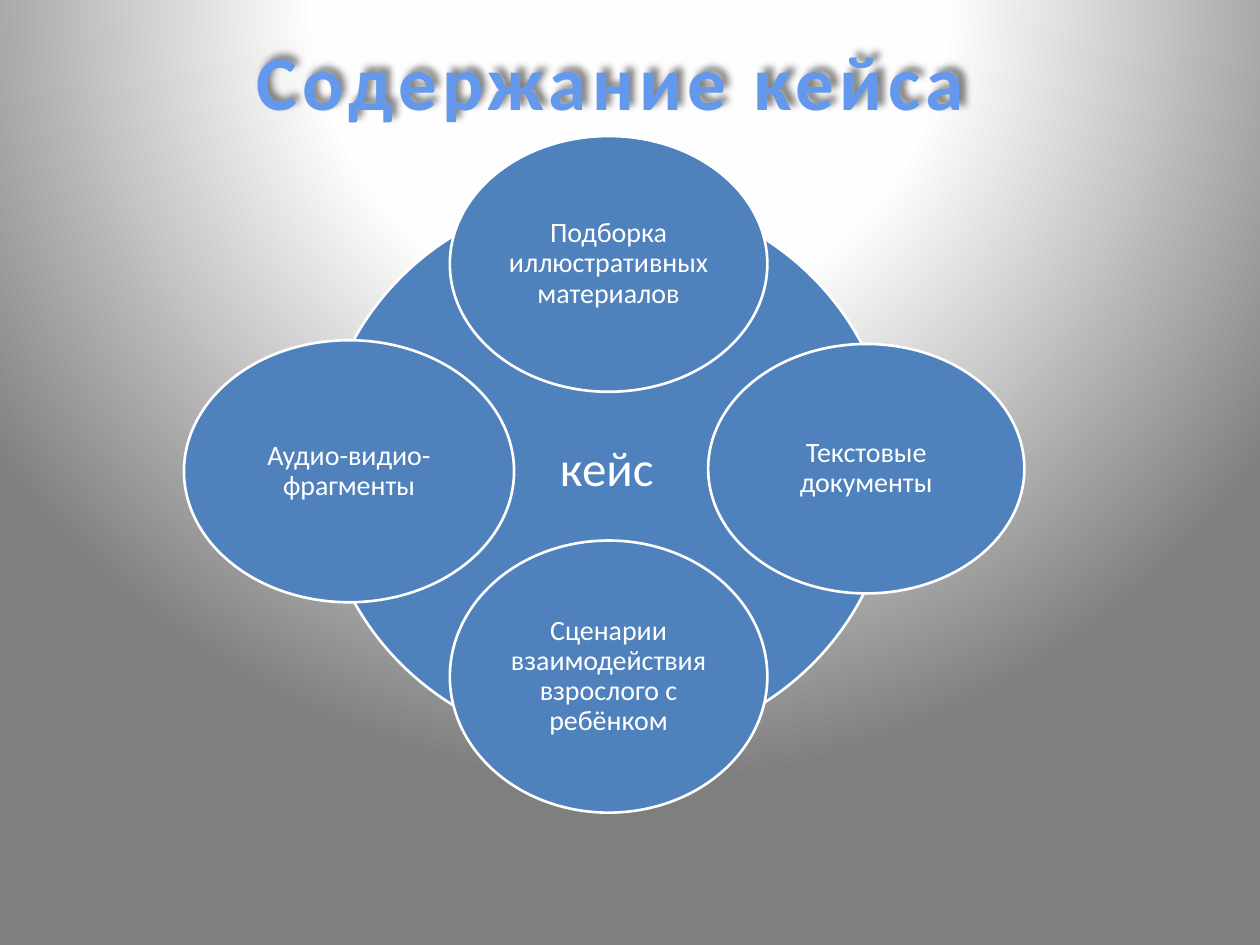
from lxml import etree
from pptx import Presentation
from pptx.dml.color import RGBColor
from pptx.enum.shapes import MSO_SHAPE
from pptx.enum.text import MSO_ANCHOR, PP_ALIGN
from pptx.oxml import parse_xml
from pptx.oxml.ns import nsdecls, qn
from pptx.util import Inches, Pt

OVAL = MSO_SHAPE.OVAL
MIDDLE = MSO_ANCHOR.MIDDLE
CENTER = PP_ALIGN.CENTER
FONT = "Calibri"
BLUE, WHITE = "4F81BD", "FFFFFF"
BACKDROP_STOPS = [(0, "FFFFFF"), (40, "FEFEFE"), (100, "7F7F7F")]
TITLE_STOPS = [(0.1, "6398ED"), (0.75, "265EA0")]

# Parts of the case around the hub: text and box (left, top, width, height)
CASE_PARTS = [
    ("Подборка иллюстративных материалов", (3.57, 1.08, 2.52, 2.03)),
    ("Текстовые документы", (5.62, 2.73, 2.51, 1.98)),
    ("Сценарии взаимодействия взрослого с ребёнком", (3.57, 4.29, 2.52, 2.16)),
    ("Аудио-видио-фрагменты", (1.46, 2.7, 2.62, 2.08)),
]


def rgb(color):
    return RGBColor.from_string(color)


def paint_backdrop(slide):
    """Radial gradient centred above the slide."""
    stops = "".join(
        f'<a:gs pos="{position * 1000}"><a:srgbClr val="{color}"/></a:gs>'
        for position, color in BACKDROP_STOPS
    )
    backdrop = parse_xml(
        f'<p:bg {nsdecls("p", "a")}><p:bgPr><a:gradFill rotWithShape="1">'
        f'<a:gsLst>{stops}</a:gsLst><a:path path="circle">'
        '<a:fillToRect l="50000" t="-80000" r="50000" b="180000"/></a:path>'
        "</a:gradFill><a:effectLst/></p:bgPr></p:bg>"
    )
    slide.element.cSld.insert(0, backdrop)


def add_title(slide, text, box):
    title = slide.shapes.title
    title.left, title.top, title.width, title.height = map(Inches, box)
    frame = title.text_frame
    frame.word_wrap = True
    frame.vertical_anchor = MIDDLE
    paragraph = frame.paragraphs[0]
    paragraph.alignment = CENTER
    run = paragraph.add_run()
    run.text = text
    font = run.font
    font.name, font.size, font.bold = FONT, Pt(44), True

    # Vertical gradient in the letters
    font.fill.gradient()
    font.fill.gradient_angle = 270
    for stop, (position, color) in zip(font.fill.gradient_stops, TITLE_STOPS):
        stop.position = position
        stop.color.rgb = rgb(color)

    # Letter spacing and thin pale outline
    properties = run._r.get_or_add_rPr()
    properties.set("spc", "300")
    properties.insert(0, parse_xml(
        f'<a:ln {nsdecls("a")} w="{Pt(0.9)}"><a:solidFill>'
        '<a:srgbClr val="F4F6F9"/></a:solidFill></a:ln>'
    ))

    # Soft shadow up and to the right
    effects = etree.SubElement(title._element.spPr, qn("a:effectLst"))
    effects.append(parse_xml(
        f'<a:outerShdw {nsdecls("a")} blurRad="{Pt(4)}" dist="{Pt(4)}" '
        'dir="18000000"><a:srgbClr val="000000"><a:alpha val="50000"/>'
        "</a:srgbClr></a:outerShdw>"
    ))


def add_circle(slide, text, box, size, margin):
    circle = slide.shapes.add_shape(OVAL, *map(Inches, box))
    circle.shadow.inherit = False
    circle.fill.solid()
    circle.fill.fore_color.rgb = rgb(BLUE)
    circle.line.color.rgb = rgb(WHITE)
    circle.line.width = Pt(1.5)
    frame = circle.text_frame
    frame.word_wrap = True
    frame.vertical_anchor = MIDDLE
    frame.margin_left = frame.margin_right = Inches(margin)
    frame.margin_top = frame.margin_bottom = Inches(margin)
    paragraph = frame.paragraphs[0]
    paragraph.text = text
    paragraph.alignment = CENTER
    paragraph.line_spacing = 0.9
    font = paragraph.font
    font.name, font.size = FONT, Pt(size)
    font.color.rgb = rgb(WHITE)


def add_case_diagram(slide, hub_box):
    """Hub circle with the parts of the case laid over its rim."""
    add_circle(slide, "кейс", hub_box, 28, 0.04)
    for text, box in CASE_PARTS:
        add_circle(slide, text, box, 16, 0.02)


def main():
    presentation = Presentation()
    presentation.slide_width, presentation.slide_height = Inches(10), Inches(7.5)
    slide = presentation.slides.add_slide(presentation.slide_layouts[5])
    paint_backdrop(slide)
    add_title(slide, "Содержание кейса", (1.46, 0.21, 6.77, 0.84))
    add_case_diagram(slide, (2.54, 1.53, 4.55, 4.41))
    presentation.save("out.pptx")


if __name__ == "__main__":
    main()
